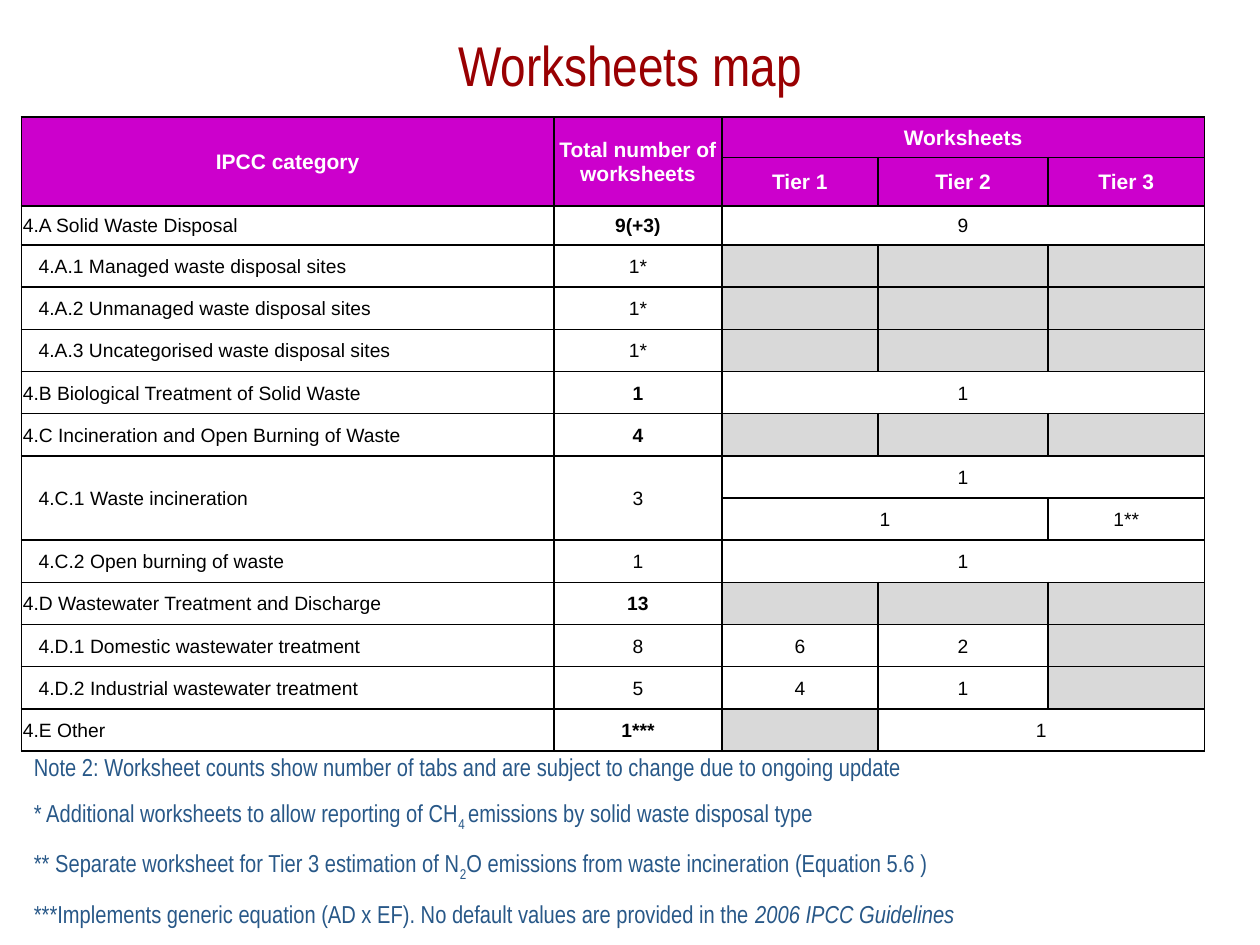
from dataclasses import dataclass

import pptx
import pptx.dml.color
import pptx.enum.text
import pptx.oxml.ns
import pptx.table
import pptx.text.text
import pptx.util
from lxml import etree

Cm = pptx.util.Cm
Pt = pptx.util.Pt
RGBColor = pptx.dml.color.RGBColor
PP_ALIGN = pptx.enum.text.PP_ALIGN
MSO_ANCHOR = pptx.enum.text.MSO_ANCHOR
qn = pptx.oxml.ns.qn

RED = RGBColor(0x99, 0x00, 0x02)
BLUE = RGBColor(0x28, 0x58, 0x88)
MAGENTA = RGBColor(0xCC, 0x00, 0xCC)
GREY = RGBColor(0xD9, 0xD9, 0xD9)
WHITE = RGBColor(0xFF, 0xFF, 0xFF)
BLACK = RGBColor(0x00, 0x00, 0x00)

COL_WIDTHS = [10.74, 3.38, 3.15, 3.43, 3.15]
ROW_HEIGHTS = [0.81, 0.97, 0.79] + [0.85] * 12
TIER_COL = 2


@dataclass
class Span:
    text: str = ""
    cols: int = 1


@dataclass
class Group:
    label: str
    total: str
    lines: list[list[Span]]
    level: int = 1
    header: bool = False


@dataclass
class Piece:
    text: str
    subscript: bool = False
    italic: bool = False


ALL_TIERS = [Span("1", 3)]
NO_TIERS = [Span(), Span(), Span()]

GROUPS = [
    Group("IPCC category", "Total number of worksheets",
          [[Span("Worksheets", 3)], [Span("Tier 1"), Span("Tier 2"), Span("Tier 3")]],
          0, True),
    Group("4.A Solid Waste Disposal", "9(+3)", [[Span("9", 3)]], 0),
    Group("4.A.1 Managed waste disposal sites", "1*", [NO_TIERS]),
    Group("4.A.2 Unmanaged waste disposal sites", "1*", [NO_TIERS]),
    Group("4.A.3 Uncategorised waste disposal sites", "1*", [NO_TIERS]),
    Group("4.B Biological Treatment of Solid Waste", "1", [ALL_TIERS], 0),
    Group("4.C Incineration and Open Burning of Waste", "4", [NO_TIERS], 0),
    Group("4.C.1 Waste incineration", "3", [ALL_TIERS, [Span("1", 2), Span("1**")]]),
    Group("4.C.2 Open burning of waste", "1", [ALL_TIERS]),
    Group("4.D Wastewater Treatment and Discharge", "13", [NO_TIERS], 0),
    Group("4.D.1 Domestic wastewater treatment", "8", [[Span("6"), Span("2"), Span()]]),
    Group("4.D.2 Industrial wastewater treatment", "5", [[Span("4"), Span("1"), Span()]]),
    Group("4.E Other", "1***", [[Span(), Span("1", 2)]], 0),
]

NOTES = [
    [Piece("Note 2: Worksheet counts show number of tabs and are subject to change "
           "due to ongoing update")],
    [Piece("* Additional worksheets to allow reporting of CH"), Piece("4 ", subscript=True),
     Piece("emissions by solid waste disposal type")],
    [Piece("** Separate worksheet for Tier 3 estimation of N"), Piece("2", subscript=True),
     Piece("O emissions from waste incineration (Equation 5.6 )")],
    [Piece("***Implements generic equation (AD x EF). No default values are provided in the "),
     Piece("2006 IPCC Guidelines", italic=True)],
]


def add_run(p: pptx.text.text._Paragraph, text: str, font: str, size: float,
            color: RGBColor) -> pptx.text.text._Run:
    r = p.add_run()
    r.text = text
    r.font.name = font
    r.font.size = Pt(size)
    r.font.color.rgb = color
    return r


def frame_cell(cell: pptx.table._Cell) -> None:
    cell.margin_left = cell.margin_right = cell.margin_top = Cm(0.03)
    cell.margin_bottom = 0
    cell.vertical_anchor = MSO_ANCHOR.MIDDLE
    tc_pr = cell._tc.get_or_add_tcPr()
    for side in ("lnL", "lnR", "lnT", "lnB"):
        ln = etree.SubElement(tc_pr, qn(f"a:{side}"), w=str(Pt(1)))
        fill = etree.SubElement(ln, qn("a:solidFill"))
        etree.SubElement(fill, qn("a:srgbClr"), val=str(BLACK))
    cell.fill.background()
    end = etree.SubElement(cell.text_frame.paragraphs[0]._p, qn("a:endParaRPr"))
    end.set("sz", "1100")


def write_cell(cell: pptx.table._Cell, text: str, header: bool, bold: bool = False,
               align: PP_ALIGN = PP_ALIGN.CENTER) -> None:
    if header or not text:
        cell.fill.solid()
        cell.fill.fore_color.rgb = MAGENTA if header else GREY
    if text:
        p = cell.text_frame.paragraphs[0]
        p.alignment = align
        r = add_run(p, text, "Arial", 12 if header else 11, WHITE if header else BLACK)
        r.font.bold = header or bold


def write_group(table: pptx.table.Table, row: int, group: Group) -> None:
    last = row + len(group.lines) - 1
    for col in range(TIER_COL):
        if last > row:
            table.cell(row, col).merge(table.cell(last, col))
    label = table.cell(row, 0)
    label.margin_left = Cm(0.03 + 0.32 * group.level)
    write_cell(label, group.label, group.header,
               align=PP_ALIGN.CENTER if group.header else PP_ALIGN.LEFT)
    write_cell(table.cell(row, 1), group.total, group.header, group.level == 0)
    for i, line in enumerate(group.lines, row):
        col = TIER_COL
        for span in line:
            cell = table.cell(i, col)
            if span.cols > 1:
                cell.merge(table.cell(i, col + span.cols - 1))
            write_cell(cell, span.text, group.header)
            col += span.cols


def write_note(p: pptx.text.text._Paragraph, pieces: list[Piece]) -> None:
    p_pr = p._p.get_or_add_pPr()
    p_pr.set("marL", "0")
    p_pr.set("indent", "0")
    etree.SubElement(p_pr, qn("a:buNone"))
    p.alignment = PP_ALIGN.JUSTIFY
    p.space_after = Pt(6)
    for piece in pieces:
        r = add_run(p, piece.text, "Arial Narrow", 14, BLUE)
        if piece.italic:
            r.font.italic = True
        if piece.subscript:
            r.font._element.set("baseline", "-25000")


def main() -> None:
    prs = pptx.Presentation()
    prs.slide_width, prs.slide_height = Cm(25.4), Cm(19.05)
    s = prs.slides.add_slide(prs.slide_layouts[1])

    title = s.shapes.title
    title.left, title.top, title.width, title.height = Cm(0.74), Cm(0.66), Cm(23.93), Cm(1.27)
    title.text_frame.vertical_anchor = MSO_ANCHOR.MIDDLE
    title.text_frame.auto_size = pptx.enum.text.MSO_AUTO_SIZE.NONE
    p = title.text_frame.paragraphs[0]
    p.alignment = PP_ALIGN.CENTER
    add_run(p, "Worksheets map", "Arial Narrow", 32, RED)

    table = s.shapes.add_table(len(ROW_HEIGHTS), len(COL_WIDTHS), Cm(0.43), Cm(2.36),
                               Cm(sum(COL_WIDTHS)), Cm(sum(ROW_HEIGHTS))).table
    table.first_row = table.horz_banding = False
    for column, width in zip(table.columns, COL_WIDTHS):
        column.width = Cm(width)
    for table_row, height in zip(table.rows, ROW_HEIGHTS):
        table_row.height = Cm(height)
    for cell in table.iter_cells():
        frame_cell(cell)
    row = 0
    for group in GROUPS:
        write_group(table, row, group)
        row += len(group.lines)

    body = s.placeholders[1]
    body.left, body.top, body.width, body.height = Cm(0.43), Cm(15.04), Cm(23.85), Cm(3.48)
    tf = body.text_frame
    tf.auto_size = pptx.enum.text.MSO_AUTO_SIZE.NONE
    tf.vertical_anchor = MSO_ANCHOR.TOP
    for i, pieces in enumerate(NOTES):
        p = tf.add_paragraph() if i else tf.paragraphs[0]
        write_note(p, pieces)
        p.space_before = Pt(3.5 if i else 0)

    prs.save("out.pptx")


if __name__ == "__main__":
    main()
